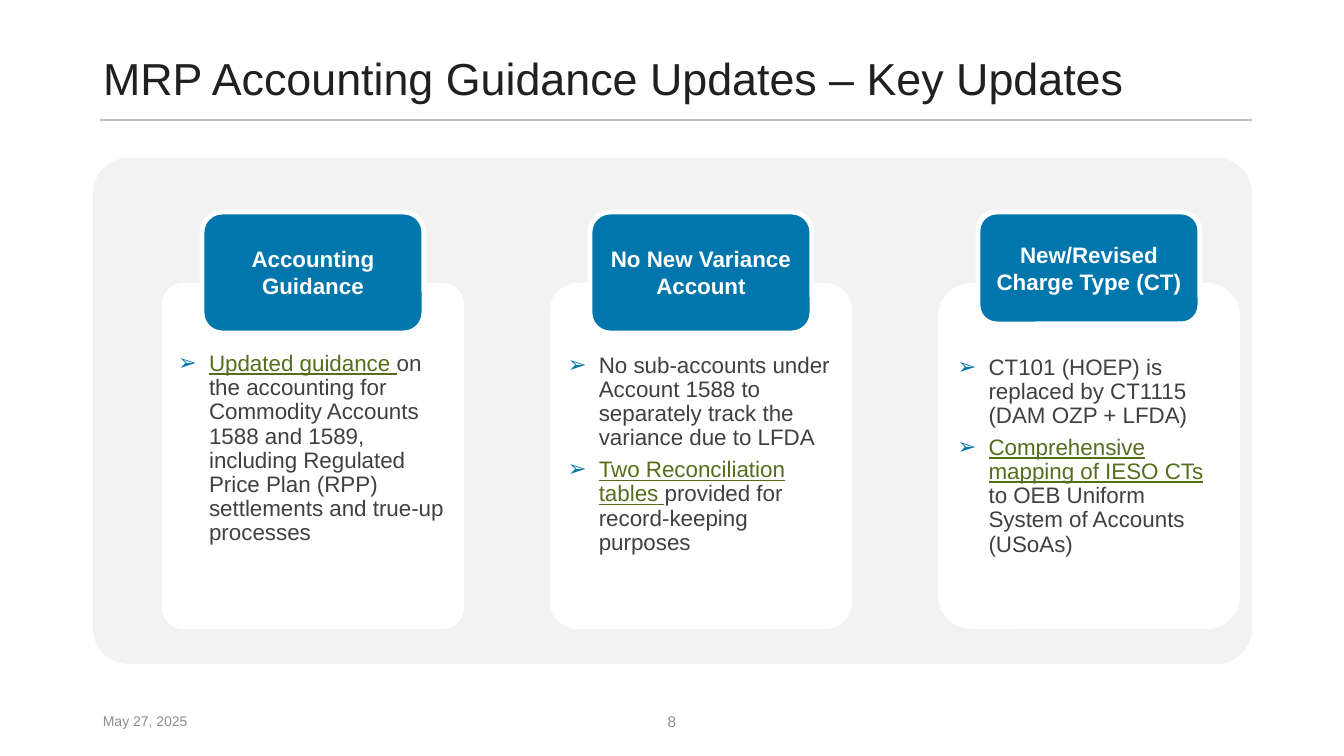
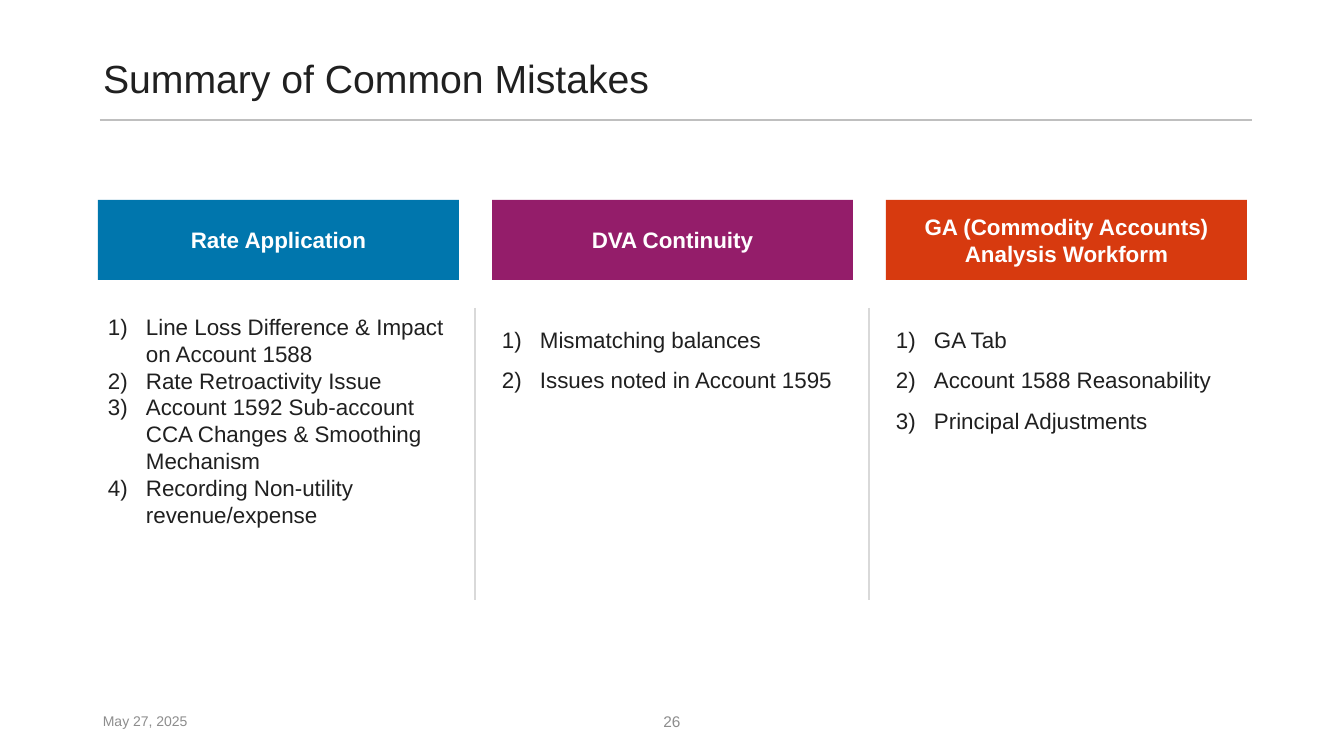
"""Build two slides on accounting guidance updates and common mistakes."""
from lxml import etree
from pptx import Presentation
from pptx.dml.color import RGBColor
from pptx.enum.shapes import MSO_CONNECTOR, MSO_SHAPE
from pptx.enum.text import MSO_ANCHOR, MSO_AUTO_SIZE, PP_ALIGN
from pptx.oxml.ns import qn
from pptx.util import Pt

STRAIGHT = MSO_CONNECTOR.STRAIGHT
RECTANGLE, ROUNDED = MSO_SHAPE.RECTANGLE, MSO_SHAPE.ROUNDED_RECTANGLE
TOP, MIDDLE = MSO_ANCHOR.TOP, MSO_ANCHOR.MIDDLE
LEFT, CENTER = PP_ALIGN.LEFT, PP_ALIGN.CENTER
NO_AUTOFIT = MSO_AUTO_SIZE.NONE

PX = 914400 / 100.8
FONT = "Arial"
INK, BODY, MUTED, LINK = "202020", "404041", "8D8D8D", "566E1C"
WHITE, PANEL, RULE, DIVIDER = "FFFFFF", "F2F2F2", "BFBFBF", "D9D9D9"
BLUE, PURPLE, ORANGE = "0076AD", "941D6A", "D73A0F"
color = RGBColor.from_string


def add_box(slide, kind, bounds, fill, anchor=TOP):
    """Add a filled shape without line or shadow, with bounds in px."""
    shape = slide.shapes.add_shape(kind, *(round(value * PX) for value in bounds))
    shape.shadow.inherit = False
    shape.fill.solid()
    shape.fill.fore_color.rgb = color(fill)
    shape.line.fill.background()
    shape.text_frame.word_wrap = True
    shape.text_frame.vertical_anchor = anchor
    return shape


def add_run(paragraph, text, size, ink, align=LEFT, bold=False, underline=False):
    """Add one formatted run to an aligned paragraph."""
    paragraph.alignment = align
    run = paragraph.add_run()
    run.text = text
    run.font.name = FONT
    run.font.size = Pt(size)
    run.font.bold = bold
    run.font.underline = underline
    run.font.color.rgb = color(ink)


presentation = Presentation()
presentation.slide_width = round(1344 * PX)
presentation.slide_height = round(756 * PX)

slides = []
lines = []
for title_text, title_size, page in [
    ("MRP Accounting Guidance Updates – Key Updates", 32, "8"),
    ("Summary of Common Mistakes", 28, "26"),
]:
    slide = presentation.slides.add_slide(presentation.slide_layouts[5])
    slides.append(slide)
    lines.append((slide, (100, 120, 1252, 120), RULE, 2))

    title = slide.shapes.title
    title.left, title.top = round(93 * PX), round(40 * PX)
    title.width, title.height = round(1159 * PX), round(81 * PX)
    title.text_frame.auto_size = NO_AUTOFIT
    title.text_frame.vertical_anchor = MIDDLE
    paragraph = title.text_frame.paragraphs[0]
    paragraph.line_spacing = 0.9
    add_run(paragraph, title_text, title_size, INK)

    for text, left, size, align in [
        ("May 27, 2025", 93, 10, LEFT),
        (page, 521, 11, CENTER),
    ]:
        bounds = (left, 701, 302, 40)
        footer = slide.shapes.add_textbox(*(round(value * PX) for value in bounds))
        footer.text_frame.word_wrap = True
        footer.text_frame.vertical_anchor = MIDDLE
        add_run(footer.text_frame.paragraphs[0], text, size, MUTED, align)

updates_slide, mistakes_slide = slides

panel = add_box(updates_slide, ROUNDED, (93, 158, 1159, 506), PANEL)
panel.adjustments[0] = 0.07

updates = [
    ("Accounting Guidance", 121, 0.07, [
        [("Updated guidance ", True),
         ("on the accounting for Commodity Accounts 1588 and 1589, including "
          "Regulated Price Plan (RPP) settlements and true-up processes", False)],
    ]),
    ("No New Variance Account", 121, 0.09, [
        [("No sub-accounts under Account 1588 to separately track the "
          "variance due to LFDA", False)],
        [("Two Reconciliation tables ", True),
         ("provided for record-keeping purposes", False)],
    ]),
    ("New/Revised Charge Type (CT)", 112, 0.11, [
        [("CT101 (HOEP) is replaced by CT1115 (DAM OZP + LFDA)", False)],
        [("Comprehensive mapping of IESO CTs ", True),
         ("to OEB Uniform System of Accounts (USoAs)", False)],
    ]),
]
for column, (heading, heading_height, corner, points) in enumerate(updates):
    left = 162 + 388 * column
    card = add_box(updates_slide, ROUNDED, (left, 283, 302, 346), WHITE)
    card.adjustments[0] = corner
    frame = card.text_frame
    frame.margin_top = round(63 * PX)
    for index, runs in enumerate(points):
        paragraph = frame.add_paragraph() if index else frame.paragraphs[0]
        properties = paragraph._p.get_or_add_pPr()
        properties.set("marL", str(round(31 * PX)))
        properties.set("indent", str(round(-31 * PX)))
        bullet_color = etree.SubElement(properties, qn("a:buClr"))
        etree.SubElement(bullet_color, qn("a:srgbClr"), val=BLUE)
        etree.SubElement(properties, qn("a:buFont"), typeface=FONT)
        etree.SubElement(properties, qn("a:buChar"), char="➢")
        paragraph.line_spacing = 0.9
        paragraph.space_after = Pt(5.6)
        for text, linked in runs:
            add_run(paragraph, text, 16, LINK if linked else BODY, underline=linked)

    tab = add_box(updates_slide, ROUNDED, (left + 40, 212, 222, heading_height), BLUE, MIDDLE)
    tab.line.color.rgb = color(WHITE)
    tab.line.width = Pt(3.5)
    add_run(tab.text_frame.paragraphs[0], heading, 16, WHITE, CENTER, bold=True)

mistakes = [
    ("Rate Application", BLUE, 1.0, [
        "Line Loss Difference & Impact on Account 1588",
        "Rate Retroactivity Issue",
        "Account 1592 Sub-account CCA Changes & Smoothing Mechanism",
        "Recording Non-utility revenue/expense",
    ]),
    ("DVA Continuity", PURPLE, 1.5, [
        "Mismatching balances",
        "Issues noted in Account 1595",
    ]),
    ("GA (Commodity Accounts) Analysis Workform", ORANGE, 1.5, [
        "GA Tab",
        "Account 1588 Reasonability",
        "Principal Adjustments",
    ]),
]
for column, (heading, fill, spacing, items) in enumerate(mistakes):
    left = 98 + 394 * column
    frame = add_box(mistakes_slide, RECTANGLE, (left, 308, 361, 252), WHITE).text_frame
    for index, text in enumerate(items):
        paragraph = frame.add_paragraph() if index else frame.paragraphs[0]
        properties = paragraph._p.get_or_add_pPr()
        properties.set("marL", str(round(38 * PX)))
        properties.set("indent", str(round(-38 * PX)))
        etree.SubElement(properties, qn("a:buFont"), typeface=FONT)
        etree.SubElement(properties, qn("a:buAutoNum"), type="arabicParenR")
        paragraph.line_spacing = spacing
        add_run(paragraph, text, 16, INK)

    header = add_box(mistakes_slide, RECTANGLE, (left, 200, 361, 80), fill, MIDDLE)
    add_run(header.text_frame.paragraphs[0], heading, 16, WHITE, CENTER, bold=True)
    if column:
        lines.append((mistakes_slide, (left - 17, 308, left - 17, 600), DIVIDER, 1))

for slide, ends, ink, width in lines:
    line = slide.shapes.add_connector(STRAIGHT, *(round(value * PX) for value in ends))
    line.line.color.rgb = color(ink)
    line.line.width = Pt(width)
    etree.SubElement(line._element.spPr, qn("a:effectLst"))

presentation.save("out.pptx")
